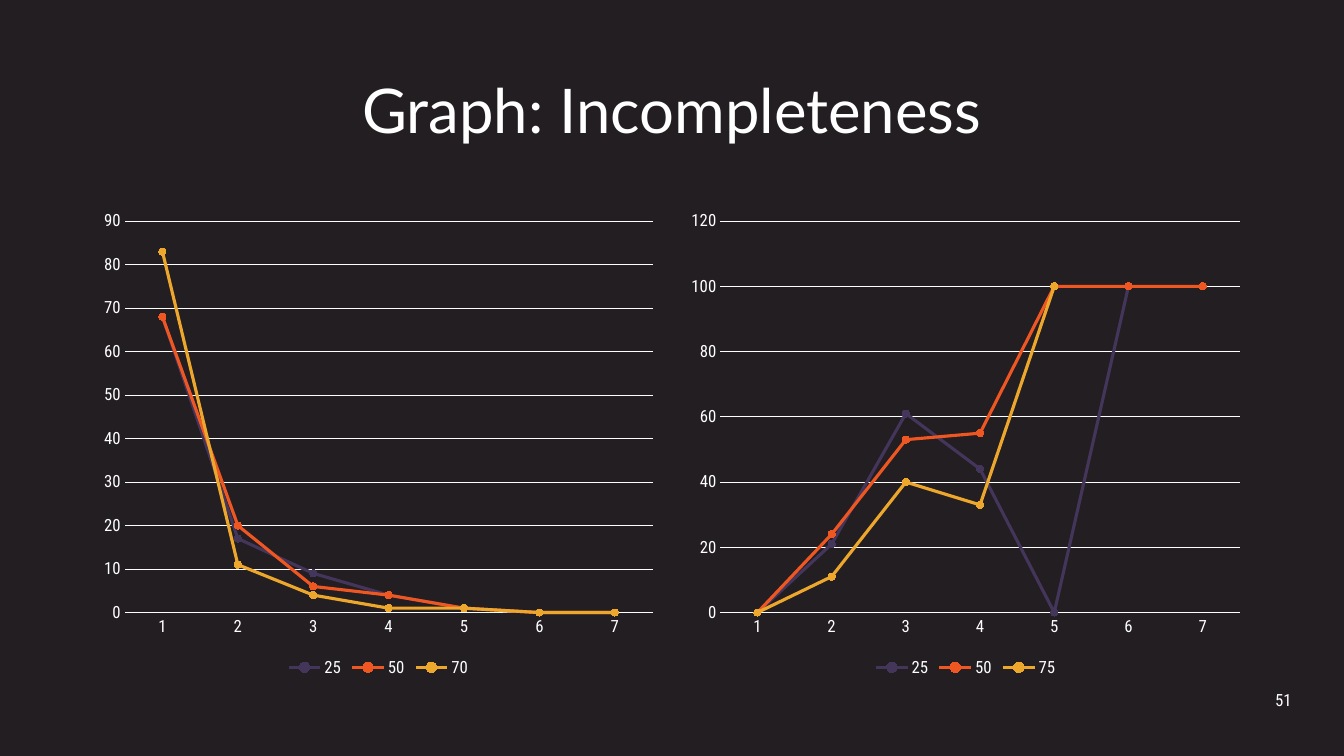
from dataclasses import dataclass

from pptx import Presentation
from pptx.chart.data import CategoryChartData
from pptx.dml.color import RGBColor
from pptx.enum.chart import XL_CHART_TYPE, XL_LEGEND_POSITION, XL_MARKER_STYLE, XL_TICK_MARK
from pptx.enum.text import MSO_ANCHOR, PP_ALIGN
from pptx.util import Inches, Pt


@dataclass(frozen=True)
class Theme:
    """Colours, fonts and sizes of the slide."""
    background: str = "221E22"
    ink: str = "FFFFFF"
    series: tuple = ("44355B", "EE5622", "ECA72C")
    title_font: str = "Lato"
    body_font: str = "Roboto Condensed"
    title_size: int = 44
    label_size: int = 12
    chart_size: int = 10
    rule: float = 0.75
    curve: float = 2.25
    marker: int = 5


THEME = Theme()
WIDTH, HEIGHT = 13.33, 7.5
MARGIN = 0.92
GUTTER = 0.16
CONTENT_TOP, CONTENT_HEIGHT = 2, 4.76
CONTENT_WIDTH = WIDTH - 2 * MARGIN
ROUNDS = [str(number) for number in range(1, 8)]
PANELS = [
    {"25": (68, 17, 9, 4, 1, 0, 0),
     "50": (68, 20, 6, 4, 1, 0, 0),
     "70": (83, 11, 4, 1, 1, 0, 0)},
    {"25": (0, 21, 61, 44, 0, 100, None),
     "50": (0, 24, 53, 55, 100, 100, 100),
     "75": (0, 11, 40, 33, 100, None, None)},
]


def apply(target, formats):
    """Set each named attribute of the target."""
    for name, value in formats.items():
        setattr(target, name, value)


def style_font(font, size, family=THEME.body_font):
    """Give a font its size, family and the ink colour."""
    apply(font, {"size": Pt(size), "name": family, "bold": False})
    font.color.rgb = RGBColor.from_string(THEME.ink)


def style_line(line, colour, width):
    """Give a line its colour and width."""
    line.color.rgb = RGBColor.from_string(colour)
    line.width = Pt(width)


def add_label(slide, box, words, size, family, alignment, spacing=1.0):
    """Place one vertically centred line of text in the box."""
    frame = slide.shapes.add_textbox(*map(Inches, box)).text_frame
    apply(frame, {"word_wrap": True, "vertical_anchor": MSO_ANCHOR.MIDDLE})
    line = frame.paragraphs[0]
    apply(line, {"alignment": alignment, "line_spacing": spacing})
    run = line.add_run()
    run.text = words
    style_font(run.font, size, family)


def style_axes(chart):
    """Format both axes and the value gridlines."""
    for axis in (chart.category_axis, chart.value_axis):
        apply(axis, {"major_tick_mark": XL_TICK_MARK.NONE,
                     "minor_tick_mark": XL_TICK_MARK.NONE})
        style_font(axis.tick_labels.font, THEME.label_size)
    style_line(chart.category_axis.format.line, THEME.ink, THEME.rule)
    chart.value_axis.format.line.fill.background()
    style_line(chart.value_axis.major_gridlines.format.line, THEME.ink, THEME.rule)


def add_line_panel(slide, box, curves):
    """Draw one line chart with markers and a bottom legend in the box."""
    data = CategoryChartData()
    data.categories = ROUNDS
    for name, values in curves.items():
        data.add_series(name, values)
    chart = slide.shapes.add_chart(
        XL_CHART_TYPE.LINE_MARKERS, *map(Inches, box), data).chart
    apply(chart, {"has_title": False, "has_legend": True})
    style_font(chart.font, THEME.chart_size)
    apply(chart.legend, {"position": XL_LEGEND_POSITION.BOTTOM, "include_in_layout": False})
    style_font(chart.legend.font, THEME.label_size)
    style_axes(chart)
    chart.plots[0].vary_by_categories = False
    for curve, colour in zip(chart.plots[0].series, THEME.series):
        curve.smooth = False
        style_line(curve.format.line, colour, THEME.curve)
        apply(curve.marker, {"style": XL_MARKER_STYLE.CIRCLE, "size": THEME.marker})
        curve.marker.format.fill.solid()
        curve.marker.format.fill.fore_color.rgb = RGBColor.from_string(colour)
        style_line(curve.marker.format.line, colour, THEME.rule)


def add_panels(slide, box):
    """Share the box between the charts as equal columns."""
    left, top, width, height = box
    column = (width - GUTTER * (len(PANELS) - 1)) / len(PANELS)
    for index, curves in enumerate(PANELS):
        add_line_panel(slide, (left + index * (column + GUTTER), top, column, height), curves)


def build_slide(deck):
    """Add the slide with its title, charts and page number."""
    slide = deck.slides.add_slide(deck.slide_layouts[6])
    slide.background.fill.solid()
    slide.background.fill.fore_color.rgb = RGBColor.from_string(THEME.background)
    add_label(slide, (MARGIN, 0.4, CONTENT_WIDTH, 1.45), "Graph: Incompleteness",
              THEME.title_size, THEME.title_font, PP_ALIGN.CENTER, 0.9)
    add_panels(slide, (MARGIN, CONTENT_TOP, CONTENT_WIDTH, CONTENT_HEIGHT))
    add_label(slide, (12.08, 6.79, 0.83, 0.3), "51",
              THEME.label_size, THEME.body_font, PP_ALIGN.RIGHT)


def main():
    """Build and save the deck."""
    deck = Presentation()
    apply(deck, {"slide_width": Inches(WIDTH), "slide_height": Inches(HEIGHT)})
    build_slide(deck)
    deck.save("out.pptx")


if __name__ == "__main__":
    main()
